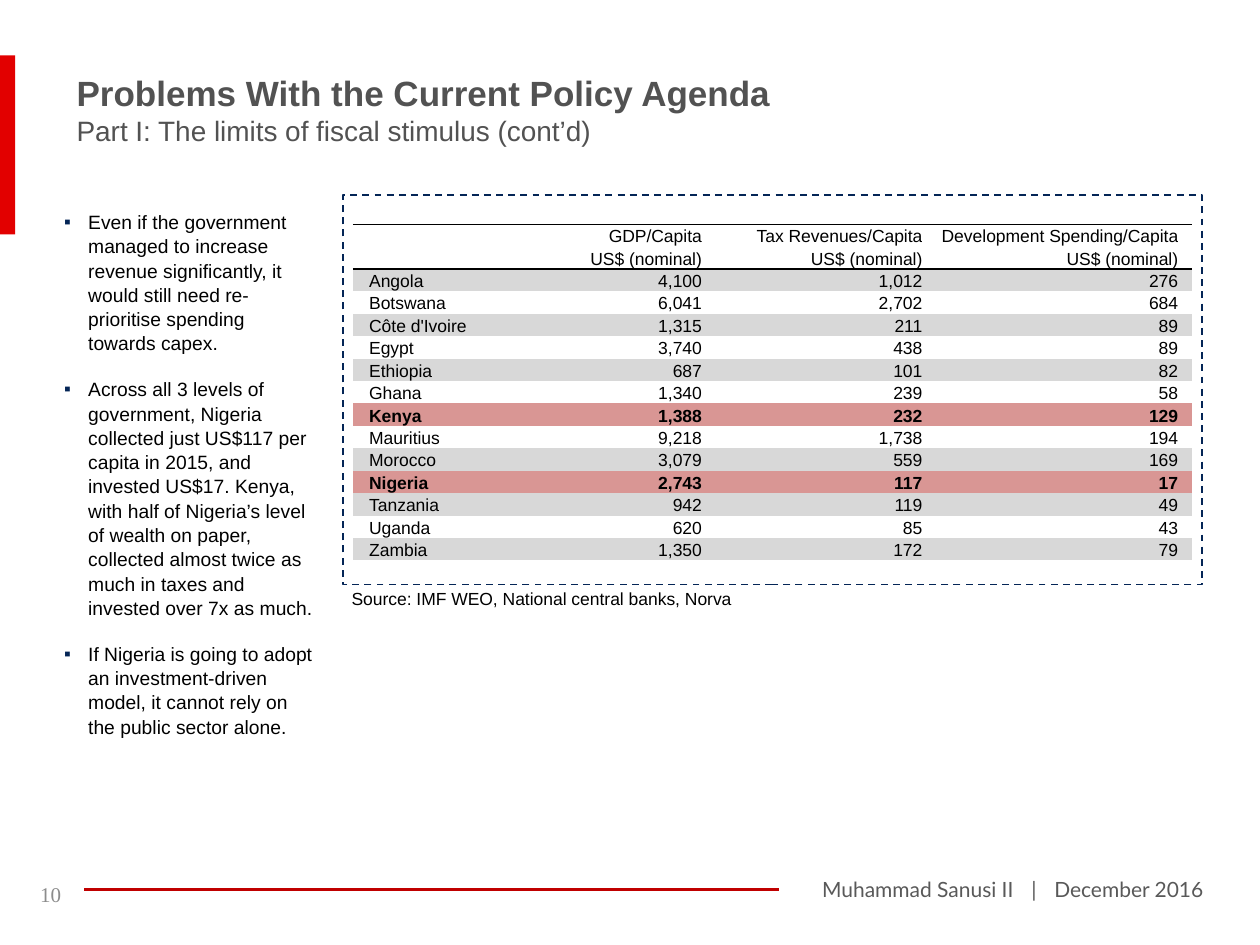
import dataclasses

import lxml.etree
import pptx
import pptx.dml.color
import pptx.enum.dml
import pptx.enum.shapes
import pptx.enum.text
import pptx.oxml
import pptx.oxml.ns
import pptx.util

Inches = pptx.util.Inches
Pt = pptx.util.Pt
RGB = pptx.dml.color.RGBColor.from_string
Align = pptx.enum.text.PP_ALIGN
Anchor = pptx.enum.text.MSO_ANCHOR
qn = pptx.oxml.ns.qn


@dataclasses.dataclass(frozen=True)
class Theme:
    """Hold the colours, fonts and type sizes."""
    red: str = "E20000"
    rule: str = "C00000"
    navy: str = "042556"
    black: str = "000000"
    white: str = "FFFFFF"
    band: str = "D8D8D8"
    mark: str = "D99694"
    title: str = "525252"
    foot: str = "595959"
    page: str = "8C8C8C"
    sans: str = "Arial"
    serif: str = "Times New Roman"
    lato: str = "Lato"
    head: int = 20
    sub: int = 16
    note: int = 12
    body: int = 11
    cell: int = 10


THEME = Theme()
PLAIN = "{2D5ABB26-0587-4C30-8999-92F81FD0307C}"
POINTS = [
    "Even if the government managed to increase revenue significantly, it would "
    "still need re-prioritise spending towards capex.",
    "Across all 3 levels of government, Nigeria collected just US$117 per capita "
    "in 2015, and invested US$17. Kenya, with half of Nigeria’s level of wealth "
    "on paper, collected almost twice as much in taxes and invested over 7x as much.",
    "If Nigeria is going to adopt an investment-driven model, it cannot rely on "
    "the public sector alone.",
]
HEADS = [
    ("", "GDP/Capita", "Tax Revenues/Capita", "Development Spending/Capita"),
    ("",) + ("US$ (nominal)",) * 3,
]
DATA = [
    ("Angola", "4,100", "1,012", "276"),
    ("Botswana", "6,041", "2,702", "684"),
    ("Côte d'Ivoire", "1,315", "211", "89"),
    ("Egypt", "3,740", "438", "89"),
    ("Ethiopia", "687", "101", "82"),
    ("Ghana", "1,340", "239", "58"),
    ("Kenya", "1,388", "232", "129"),
    ("Mauritius", "9,218", "1,738", "194"),
    ("Morocco", "3,079", "559", "169"),
    ("Nigeria", "2,743", "117", "17"),
    ("Tanzania", "942", "119", "49"),
    ("Uganda", "620", "85", "43"),
    ("Zambia", "1,350", "172", "79"),
]
MARKED = {"Kenya", "Nigeria"}
WIDTHS = [0.13, 0.89, 1.75, 1.75, 2.03, 0.11]


def style(para, size, color, face=THEME.sans, bold=False):
    """Set the font of a paragraph."""
    font = para.font
    font.size, font.name, font.bold = Pt(size), face, bold
    font.color.rgb = RGB(color)


def add_box(slide, area, pad=(0.1, 0.05, 0.1, 0.05)):
    """Add a wrapping text box and return its frame."""
    frame = slide.shapes.add_textbox(*map(Inches, area)).text_frame
    frame.word_wrap = True
    (frame.margin_left, frame.margin_top,
     frame.margin_right, frame.margin_bottom) = map(Inches, pad)
    return frame


def add_rect(slide, area, fill=None, line=None):
    """Add a rectangle, either filled or with a dashed outline."""
    kind = pptx.enum.shapes.MSO_SHAPE.RECTANGLE
    rect = slide.shapes.add_shape(kind, *map(Inches, area))
    rect.shadow.inherit = False
    if fill:
        rect.fill.solid()
        rect.fill.fore_color.rgb = RGB(fill)
    else:
        rect.fill.background()
    if line:
        rect.line.color.rgb = RGB(line)
        rect.line.width = Pt(1)
        rect.line.dash_style = pptx.enum.dml.MSO_LINE.DASH
    else:
        rect.line.fill.background()


def add_rule(slide, left, right, top):
    """Add the horizontal footer rule."""
    kind = pptx.enum.shapes.MSO_CONNECTOR.STRAIGHT
    rule = slide.shapes.add_connector(kind, *map(Inches, (left, top, right, top)))
    rule.line.color.rgb = RGB(THEME.rule)
    rule.line.width = Pt(1.5)
    lxml.etree.SubElement(rule._element.spPr, qn("a:effectLst"))


def add_points(slide):
    """Add the bulleted text."""
    frame = add_box(slide, (0.51, 1.66, 1.99, 4.61), (0, 0, 0, 0))
    for i, text in enumerate(POINTS):
        para = frame.paragraphs[0] if i == 0 else frame.add_paragraph()
        para.text = text
        para.line_spacing = 1.05
        para.space_before = Pt(12.5 if i else 0)
        props = para._p.get_or_add_pPr()
        props.set("marL", str(Inches(0.19)))
        props.set("indent", str(-Inches(0.19)))
        color = lxml.etree.SubElement(props, qn("a:buClr"))
        lxml.etree.SubElement(color, qn("a:srgbClr"), val=THEME.navy)
        lxml.etree.SubElement(props, qn("a:buFont"), typeface=THEME.sans)
        lxml.etree.SubElement(props, qn("a:buChar"), char="▪")
        style(para, THEME.body, THEME.black)


def set_edge(cell, width):
    """Draw the bottom border of a cell."""
    props = cell._tc.get_or_add_tcPr()
    edge = lxml.etree.SubElement(props, qn("a:lnB"), w=str(Pt(width)))
    fill = lxml.etree.SubElement(edge, qn("a:solidFill"))
    lxml.etree.SubElement(fill, qn("a:srgbClr"), val=THEME.black)


def set_cell(cell, text, fill, bold, align, edge):
    """Fill and format a table cell."""
    cell.margin_left = cell.margin_right = cell.margin_top = cell.margin_bottom = 0
    cell.vertical_anchor = Anchor.BOTTOM
    if edge:
        set_edge(cell, edge)
    cell.fill.solid()
    cell.fill.fore_color.rgb = RGB(fill)
    para = cell.text_frame.paragraphs[0]
    para.text = text
    para.alignment = align
    style(para, THEME.cell, THEME.black, bold=bold)
    if not text:
        lxml.etree.SubElement(para._p, qn("a:endParaRPr"), sz=str(THEME.cell * 100))


def add_grid(slide):
    """Add the table of countries between blank margin cells."""
    blank = ("",) * 4
    rows = [blank, *HEADS, *DATA, blank]
    area = map(Inches, (2.8, 1.6, sum(WIDTHS), 3.03))
    table = slide.shapes.add_table(len(rows), len(WIDTHS), *area).table
    table.first_row = table.horz_banding = False
    table._tbl.tblPr.find(qn("a:tableStyleId")).text = PLAIN
    for col, width in zip(table.columns, WIDTHS):
        col.width = Inches(width)
    edges = {0: 0.5, len(HEADS): 1}
    first = 1 + len(HEADS)
    for r, row in enumerate(rows):
        bold = row[0] in MARKED
        band = row[0] and (r - first) % 2 == 0
        fill = THEME.mark if bold else THEME.band if band else THEME.white
        for c, text in enumerate(("", *row, "")):
            align = Align.LEFT if c < 2 else Align.RIGHT
            set_cell(table.cell(r, c), text, fill, bold, align, edges.get(r))


def add_foot(slide):
    """Add the footer with widened spaces around its bar."""
    para = add_box(slide, (5.63, 6.91, 4.02, 0.3)).paragraphs[0]
    para.alignment = Align.RIGHT
    style(para, THEME.note, THEME.foot, THEME.lato)
    for text in ("Muhammad Sanusi II", " ", "|", " ", "December 2016"):
        run = para.add_run()
        run.text = text
        if text == " ":
            run._r.get_or_add_rPr().set("spc", "700")


def add_title(slide):
    """Add the title and its subtitle."""
    frame = add_box(slide, (0.51, 0.52, 8.66, 0.71))
    head, sub = frame.paragraphs[0], frame.add_paragraph()
    head.text = "Problems With the Current Policy Agenda"
    sub.text = "Part I: The limits of fiscal stimulus (cont’d)"
    style(head, THEME.head, THEME.title, bold=True)
    style(sub, THEME.sub, THEME.title)


def add_note(slide, text, area, pad, size, color, face):
    """Add a single line of small text."""
    para = add_box(slide, area, pad).paragraphs[0]
    para.text = text
    style(para, size, color, face)


def main():
    """Build and save the slide."""
    deck = pptx.Presentation()
    deck.slide_width, deck.slide_height = Inches(10), Inches(7.5)
    slide = deck.slides.add_slide(deck.slide_layouts[6])
    add_foot(slide)
    add_rule(slide, 0.67, 6.18, 7.06)
    add_rect(slide, (0, 0.44, 0.12, 1.42), fill=THEME.red)
    add_title(slide)
    add_points(slide)
    add_grid(slide)
    add_rect(slide, (2.72, 1.55, 6.82, 3.09), line=THEME.navy)
    add_note(slide, "Source: IMF WEO, National central banks, Norva",
             (2.72, 4.64, 5.41, 0.24), (0.07, 0.03, 0.07, 0.04),
             THEME.cell, THEME.black, THEME.sans)
    add_note(slide, "10", (0.22, 6.95, 0.43, 0.34), (0.1, 0.05, 0.1, 0.05),
             THEME.note, THEME.page, THEME.serif)
    deck.save("out.pptx")


if __name__ == "__main__":
    main()
